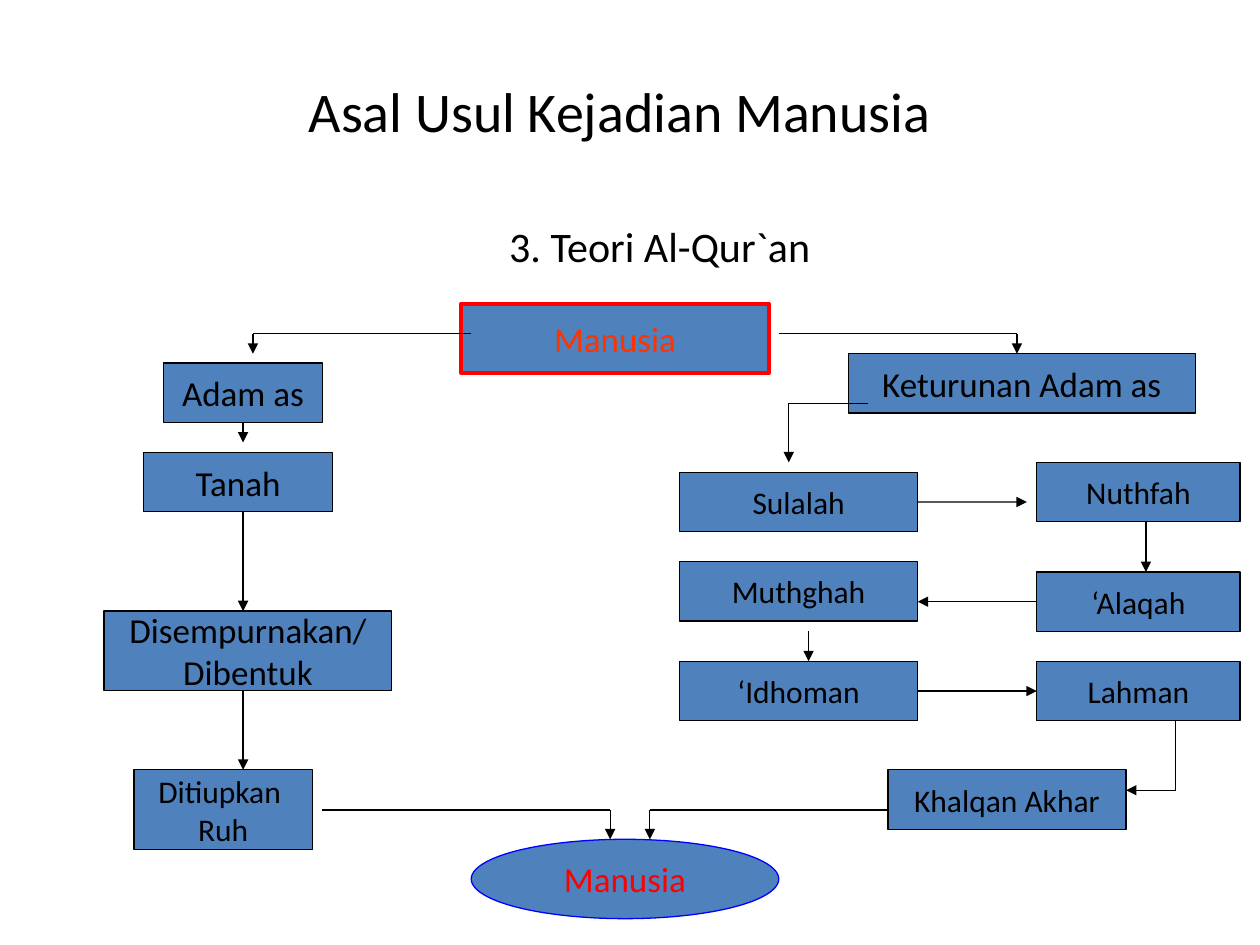
from dataclasses import dataclass
from typing import Optional

from lxml.etree import SubElement
from pptx import Presentation
from pptx.dml.color import RGBColor
from pptx.enum.shapes import MSO_CONNECTOR, MSO_SHAPE
from pptx.enum.text import MSO_ANCHOR, PP_ALIGN
from pptx.oxml.ns import qn
from pptx.util import Cm, Pt

FONT = "Calibri"
BLACK = "000000"
FILL = "4F81BD"
BOTTOM, LEFT, RIGHT = 2, 1, 3


@dataclass
class Node:
    """A labelled box of the diagram, measured in centimetres."""
    key: str
    text: str
    x: float
    y: float
    w: float
    h: float = 1.2
    size: int = 20
    color: str = BLACK
    line: str = BLACK
    line_width: float = 0.75
    kind: MSO_SHAPE = MSO_SHAPE.RECTANGLE


@dataclass
class Route:
    """A path of straight segments, with optional glued ends."""
    points: list[tuple[float, float]]
    begin: Optional[tuple[str, int]] = None
    end: Optional[tuple[str, int]] = None


LEFT_X, MID_X, RIGHT_X = 4.9, 13.7, 20.9
MID_W, RIGHT_W = 4.8, 4.1
MID_END = MID_X + MID_W
TOP_Y, JOIN_Y, END_Y = 6.73, 16.33, 16.92

NODES = [
    Node("start", "Manusia", 9.3, 6.12, 6.2, 1.4, color="FF3300",
         line="FF0000", line_width=2.25),
    Node("adam", "Adam as", 3.3, 7.32, 3.2),
    Node("keturunan", "Keturunan Adam as", 17.1, 7.13, 7),
    Node("tanah", "Tanah", 2.9, 9.12, 3.8),
    Node("dibentuk", "Disempurnakan/\nDibentuk", 2.1, 12.32, 5.8, 1.6),
    Node("ruh", "Ditiupkan \nRuh", 2.7, 15.52, 3.6, 1.6, 18),
    Node("sulalah", "Sulalah", MID_X, 9.52, MID_W, size=18),
    Node("muthghah", "Muthghah", MID_X, 11.32, MID_W, size=18),
    Node("idhoman", "‘Idhoman", MID_X, 13.33, MID_W, size=18),
    Node("nuthfah", "Nuthfah", RIGHT_X, 9.32, RIGHT_W, size=18),
    Node("alaqah", "‘Alaqah", RIGHT_X, 11.53, RIGHT_W, size=18),
    Node("lahman", "Lahman", RIGHT_X, 13.33, RIGHT_W, size=18),
    Node("khalqan", "Khalqan Akhar", 17.9, 15.52, 4.8, size=18),
    Node("finish", "Manusia", 9.5, END_Y, 6.2, 1.6, color="FF0000",
         line="0000FF", kind=MSO_SHAPE.OVAL),
]

ROUTES = [
    Route([(9.5, TOP_Y), (5.1, TOP_Y), (5.1, 7.13)]),
    Route([(LEFT_X, 8.52), (LEFT_X, 8.92)], begin=("adam", BOTTOM)),
    Route([(LEFT_X, 10.32), (LEFT_X, 12.32)]),
    Route([(LEFT_X, 13.92), (LEFT_X, 15.52)]),
    Route([(15.7, TOP_Y), (20.5, TOP_Y), (20.5, 7.13)]),
    Route([(17.5, 8.13), (15.9, 8.13), (15.9, 9.32)]),
    Route([(MID_END, 10.12), (20.7, 10.12)], begin=("sulalah", RIGHT)),
    Route([(23.1, 10.52), (23.1, 11.53)]),
    Route([(RIGHT_X, 12.13), (MID_END, 12.13)], begin=("alaqah", LEFT)),
    Route([(16.3, 12.73), (16.3, 13.33)]),
    Route([(MID_END, 13.93), (RIGHT_X, 13.93)],
          begin=("idhoman", RIGHT), end=("lahman", LEFT)),
    Route([(23.7, 14.53), (23.7, 15.93), (22.7, 15.93)]),
    Route([(17.9, JOIN_Y), (13.1, JOIN_Y), (13.1, END_Y)]),
    Route([(6.5, JOIN_Y), (12.3, JOIN_Y), (12.3, END_Y)]),
]


def rgb(value: str) -> RGBColor:
    """Turn a hex string into a colour."""
    return RGBColor.from_string(value)


def write(tf, text: str, size: int, color: str, anchor, wrap: bool) -> None:
    """Fill a text frame with centred text in one style."""
    tf.text = text
    tf.word_wrap = wrap
    tf.vertical_anchor = anchor
    for p in tf.paragraphs:
        p.alignment = PP_ALIGN.CENTER
        for r in p.runs:
            r.font.name = FONT
            r.font.size = Pt(size)
            r.font.color.rgb = rgb(color)


def add_heading(s, text: str, x: float, y: float, w: float, h: float,
                size: int, anchor):
    """Add a wrapped, centred text box."""
    sp = s.shapes.add_textbox(Cm(x), Cm(y), Cm(w), Cm(h))
    write(sp.text_frame, text, size, BLACK, anchor, True)
    return sp


def add_node(s, node: Node):
    """Draw one box with its label."""
    sp = s.shapes.add_shape(node.kind, Cm(node.x), Cm(node.y),
                            Cm(node.w), Cm(node.h))
    sp.shadow.inherit = False
    sp.fill.solid()
    sp.fill.fore_color.rgb = rgb(FILL)
    sp.line.color.rgb = rgb(node.line)
    sp.line.width = Pt(node.line_width)
    write(sp.text_frame, node.text, node.size, node.color,
          MSO_ANCHOR.MIDDLE, False)
    return sp


def add_segment(s, a: tuple[float, float], b: tuple[float, float],
                arrow: bool):
    """Draw one straight line, with an arrowhead at its end if asked."""
    c = s.shapes.add_connector(MSO_CONNECTOR.STRAIGHT, Cm(a[0]), Cm(a[1]),
                               Cm(b[0]), Cm(b[1]))
    c.line.color.rgb = rgb(BLACK)
    c.line.width = Pt(0.75)
    if arrow:
        SubElement(c.line._get_or_add_ln(), qn("a:tailEnd"), type="triangle")
    SubElement(c._element.spPr, qn("a:effectLst"))
    return c


def add_route(s, route: Route, boxes: dict) -> None:
    """Draw a path and glue its ends to boxes where given."""
    pairs = list(zip(route.points, route.points[1:]))
    lines = [add_segment(s, a, b, i == len(pairs))
             for i, (a, b) in enumerate(pairs, 1)]
    if route.begin:
        key, side = route.begin
        lines[0].begin_connect(boxes[key], side)
    if route.end:
        key, side = route.end
        lines[-1].end_connect(boxes[key], side)


def main() -> None:
    """Build the slide and save it."""
    prs = Presentation()
    prs.slide_width, prs.slide_height = Cm(25.4), Cm(19.05)
    s = prs.slides.add_slide(prs.slide_layouts[6])
    add_heading(s, "Asal Usul Kejadian Manusia", 1.7, 0.92, 21.6, 2.6, 32,
                MSO_ANCHOR.MIDDLE)
    theory = add_heading(s, "3. Teori Al-Qur`an", 1.2, 4.32, 24.2, 13.4, 24,
                         MSO_ANCHOR.TOP)
    theory.text_frame.paragraphs[0].space_before = Pt(4.8)
    boxes = {node.key: add_node(s, node) for node in NODES}
    for route in ROUTES:
        add_route(s, route, boxes)
    prs.save("out.pptx")


if __name__ == "__main__":
    main()
